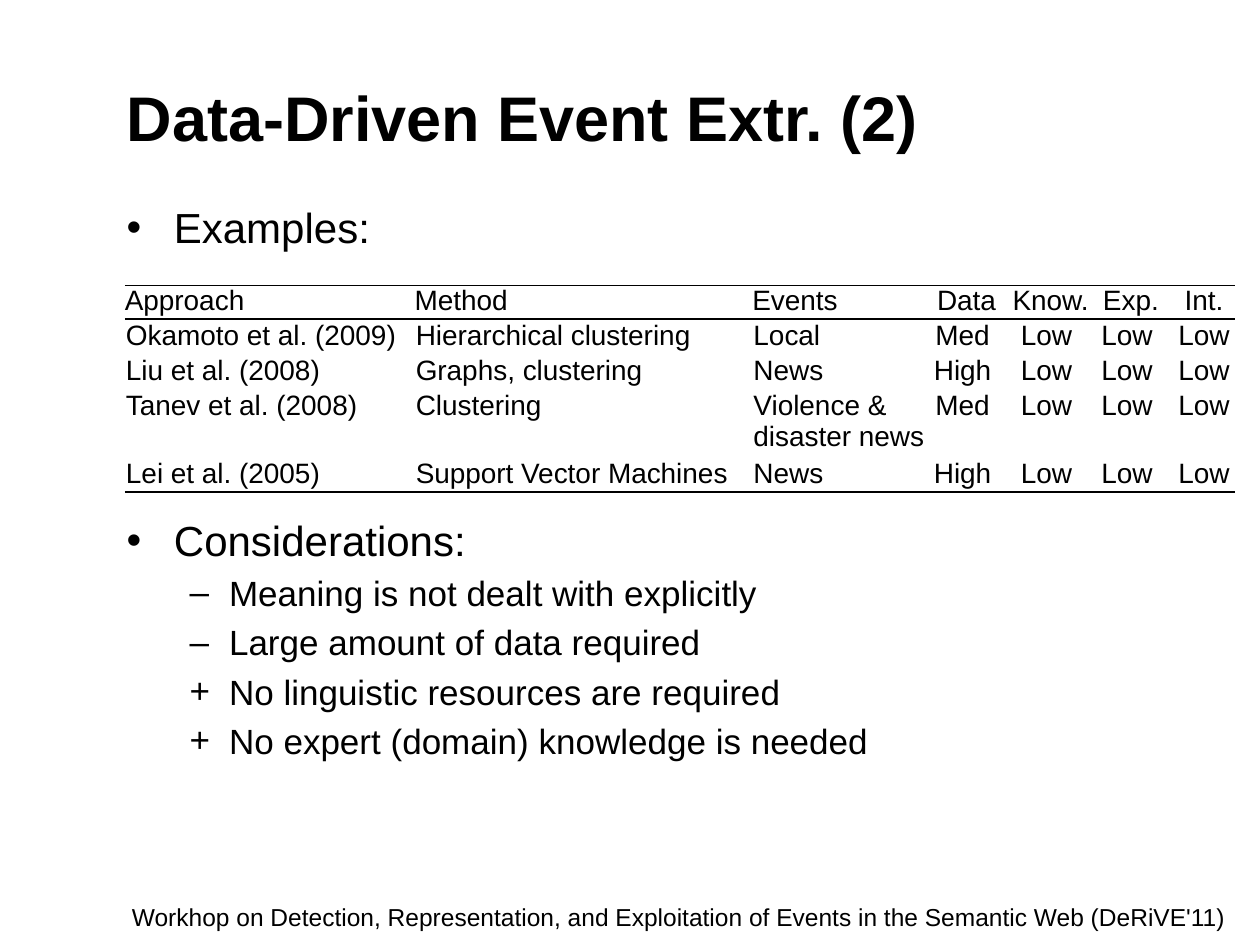
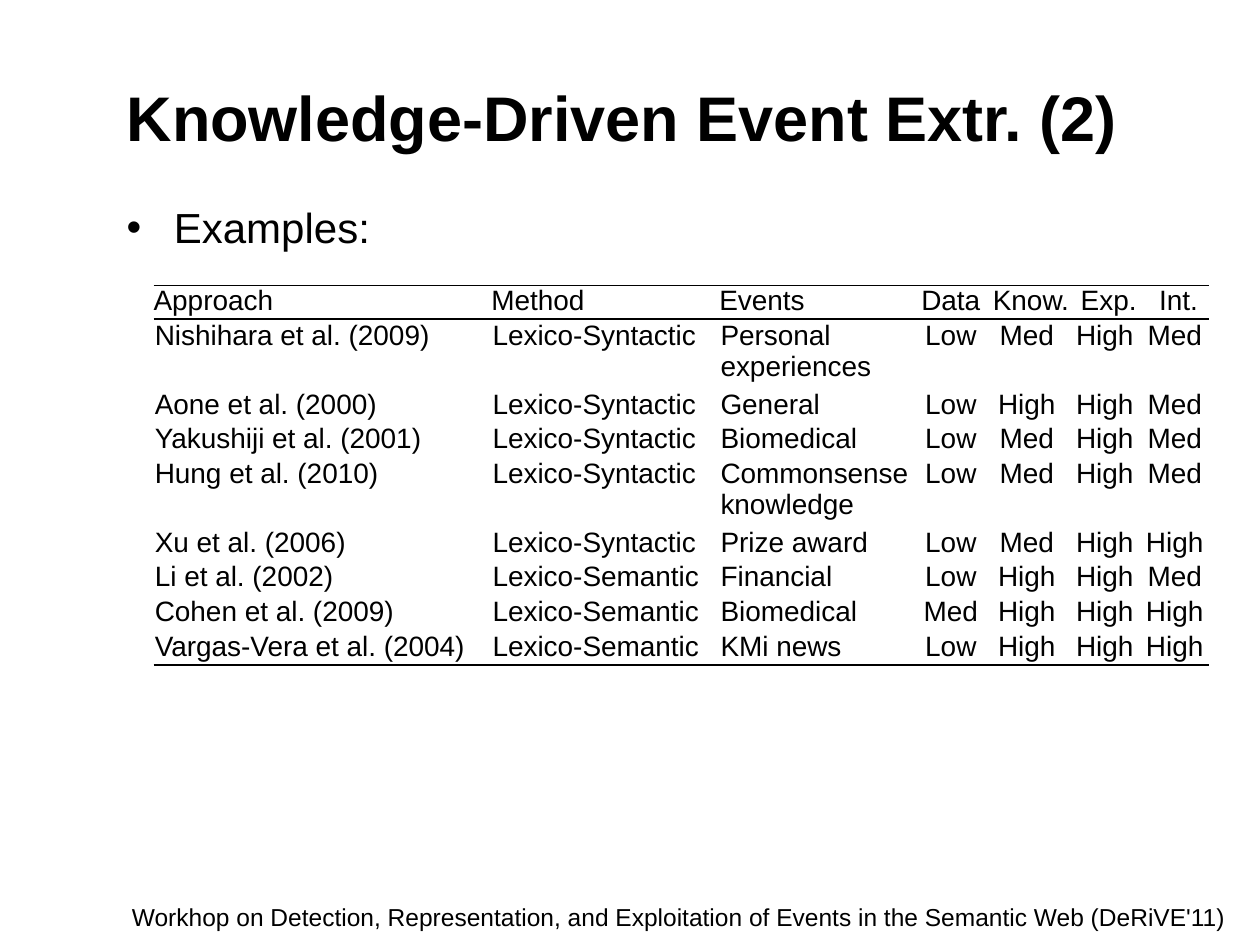
"""Build two slides comparing data-driven and knowledge-driven event extraction."""
from lxml.etree import SubElement
from pptx import Presentation
from pptx.dml.color import RGBColor
from pptx.enum.text import MSO_ANCHOR as Anchor, PP_ALIGN as Align
from pptx.oxml import parse_xml
from pptx.oxml.ns import nsdecls, qn
from pptx.util import Pt

BLACK = "000000"
FOOTER = ("Workhop on Detection, Representation, and Exploitation of Events "
          "in the Semantic Web (DeRiVE'11)")
TITLE_FORMAT = {"name": "Arial", "size": Pt(36), "bold": True}
FOOTER_FORMAT = {"name": "Arial", "size": Pt(14)}
CELL_FORMAT = {"name": "Arial", "size": Pt(16)}
BODY_LEVELS = [
    {"margin": 27, "hanging": 27, "font": {"name": "Arial", "size": Pt(24)}},
    {"margin": 58.5, "hanging": 22.5, "font": {"name": "Arial", "size": Pt(20)}},
]
HEADERS = ["Approach", "Method", "Events", "Data", "Know.", "Exp.", "Int."]
HEADER_ALIGN = [Align.LEFT] * 3 + [Align.CENTER, Align.RIGHT] + [Align.CENTER] * 2
BODY_ALIGN = [Align.LEFT] * 3 + [Align.CENTER] * 4
SPACE = 4.45
HEADER_SHIFTS = {5: (SPACE, 0), 6: (SPACE, 0)}
FIRST_HEIGHTS = [11.5, 7.2]
ROW_HEIGHT = 15.1

SLIDES = [
    {
        "title": "Data-Driven Event Extr. (2)",
        "body": [
            (0, "•", "Examples:", 0),
            (0, "•", "Considerations:", 150),
            (1, "–", "Meaning is not dealt with explicitly", 4),
            (1, "–", "Large amount of data required", 4),
            (1, "+", "No linguistic resources are required", 4),
            (1, "+", "No expert (domain) knowledge is needed", 4),
        ],
        "left": 71.3,
        "height": 118,
        "columns": [165.6, 193, 100.8, 43.2, 48.2, 43.9, 39.6],
        "shifts": {3: (0, SPACE), 6: (SPACE, 0)},
        "rows": [
            ["Okamoto et al. (2009)", "Hierarchical clustering", "Local", "Med", "Low", "Low", "Low"],
            ["Liu et al. (2008)", "Graphs, clustering", "News", "High", "Low", "Low", "Low"],
            ["Tanev et al. (2008)", "Clustering", "Violence &\ndisaster news", "Med", "Low", "Low", "Low"],
            ["Lei et al. (2005)", "Support Vector Machines", "News", "High", "Low", "Low", "Low"],
        ],
    },
    {
        "title": "Knowledge-Driven Event Extr. (2)",
        "body": [(0, "•", "Examples:", 0)],
        "left": 87.8,
        "height": 217.4,
        "columns": [193, 130.3, 113, 38.6, 48.2, 41, 38.9],
        "shifts": {},
        "rows": [
            ["Nishihara et al. (2009)", "Lexico-Syntactic", "Personal experiences", "Low", "Med", "High", "Med"],
            ["Aone et al. (2000)", "Lexico-Syntactic", "General", "Low", "High", "High", "Med"],
            ["Yakushiji et al. (2001)", "Lexico-Syntactic", "Biomedical", "Low", "Med", "High", "Med"],
            ["Hung et al. (2010)", "Lexico-Syntactic", "Commonsense knowledge", "Low", "Med", "High", "Med"],
            ["Xu et al. (2006)", "Lexico-Syntactic", "Prize award", "Low", "Med", "High", "High"],
            ["Li et al. (2002)", "Lexico-Semantic", "Financial", "Low", "High", "High", "Med"],
            ["Cohen et al. (2009)", "Lexico-Semantic", "Biomedical", "Med", "High", "High", "High"],
            ["Vargas-Vera et al. (2004)", "Lexico-Semantic", "KMi news", "Low", "High", "High", "High"],
        ],
    },
]


def style(paragraph, font_format, color=BLACK):
    for part in [paragraph, *paragraph.runs]:
        for name, value in font_format.items():
            setattr(part.font, name, value)
        part.font.color.rgb = RGBColor.from_string(color)


def add_text_frame(slide, left, top, width, height):
    frame = slide.shapes.add_textbox(Pt(left), Pt(top), Pt(width), Pt(height)).text_frame
    frame.word_wrap = True
    return frame


presentation = Presentation()
presentation.slide_width, presentation.slide_height = Pt(720), Pt(540)

for content in SLIDES:
    slide = presentation.slides.add_slide(presentation.slide_layouts[6])

    title = add_text_frame(slide, 65.3, 21.6, 619.2, 90)
    title.vertical_anchor = Anchor.MIDDLE
    title.text = content["title"]
    style(title.paragraphs[0], TITLE_FORMAT)

    body = add_text_frame(slide, 65.3, 111.7, 619.2, 391)
    for index, (level, bullet, text, space_before) in enumerate(content["body"]):
        paragraph = body.add_paragraph() if index else body.paragraphs[0]
        paragraph.text = text
        paragraph.level = level
        paragraph.space_before = Pt(space_before)
        level_format = BODY_LEVELS[level]
        properties = paragraph._p.get_or_add_pPr()
        properties.set("marL", str(Pt(level_format["margin"])))
        properties.set("indent", str(-Pt(level_format["hanging"])))
        SubElement(properties, qn("a:buFont"), typeface="Arial")
        SubElement(properties, qn("a:buChar"), char=bullet)
        style(paragraph, level_format["font"])

    footer = add_text_frame(slide, 61.9, 511.9, 652.3, 17.3)
    footer.text = FOOTER
    footer.paragraphs[0].alignment = Align.CENTER
    style(footer.paragraphs[0], FOOTER_FORMAT)

    rows = [HEADERS] + content["rows"]
    columns = content["columns"]
    heights = FIRST_HEIGHTS + [ROW_HEIGHT] * (len(rows) - len(FIRST_HEIGHTS))
    table_shape = slide.shapes.add_table(
        len(rows), len(columns), Pt(content["left"]), Pt(163.2),
        Pt(sum(columns)), Pt(content["height"]))
    table = table_shape.table
    table.first_row = table.horz_banding = False
    for column, width in zip(table.columns, columns):
        column.width = Pt(width)
    for table_row, height in zip(table.rows, heights):
        table_row.height = Pt(height)
    table_shape.height = Pt(content["height"])

    for row_index, row in enumerate(rows):
        is_header = row_index == 0
        alignments = HEADER_ALIGN if is_header else BODY_ALIGN
        shifts = HEADER_SHIFTS if is_header else content["shifts"]
        inset = 0 if is_header else 0.7
        ruled_sides = {"T": row_index <= 1, "B": row_index in (0, len(rows) - 1)}
        for column_index, text in enumerate(row):
            cell = table.cell(row_index, column_index)
            cell.text = text
            shift_left, shift_right = shifts.get(column_index, (0, 0))
            margins = {"left": inset + shift_left, "top": inset,
                       "right": inset + shift_right, "bottom": 0}
            for side, margin in margins.items():
                setattr(cell, f"margin_{side}", Pt(margin))
            for paragraph in cell.text_frame.paragraphs:
                paragraph.alignment = alignments[column_index]
                style(paragraph, CELL_FORMAT)
            cell.fill.background()
            for position, side in enumerate("LRTB"):
                paint = (f'<a:solidFill><a:srgbClr val="{BLACK}"/></a:solidFill>'
                         if ruled_sides.get(side) else "<a:noFill/>")
                border = parse_xml(f'<a:ln{side} {nsdecls("a")} w="{Pt(1)}">{paint}</a:ln{side}>')
                cell._tc.get_or_add_tcPr().insert(position, border)

presentation.save("out.pptx")
